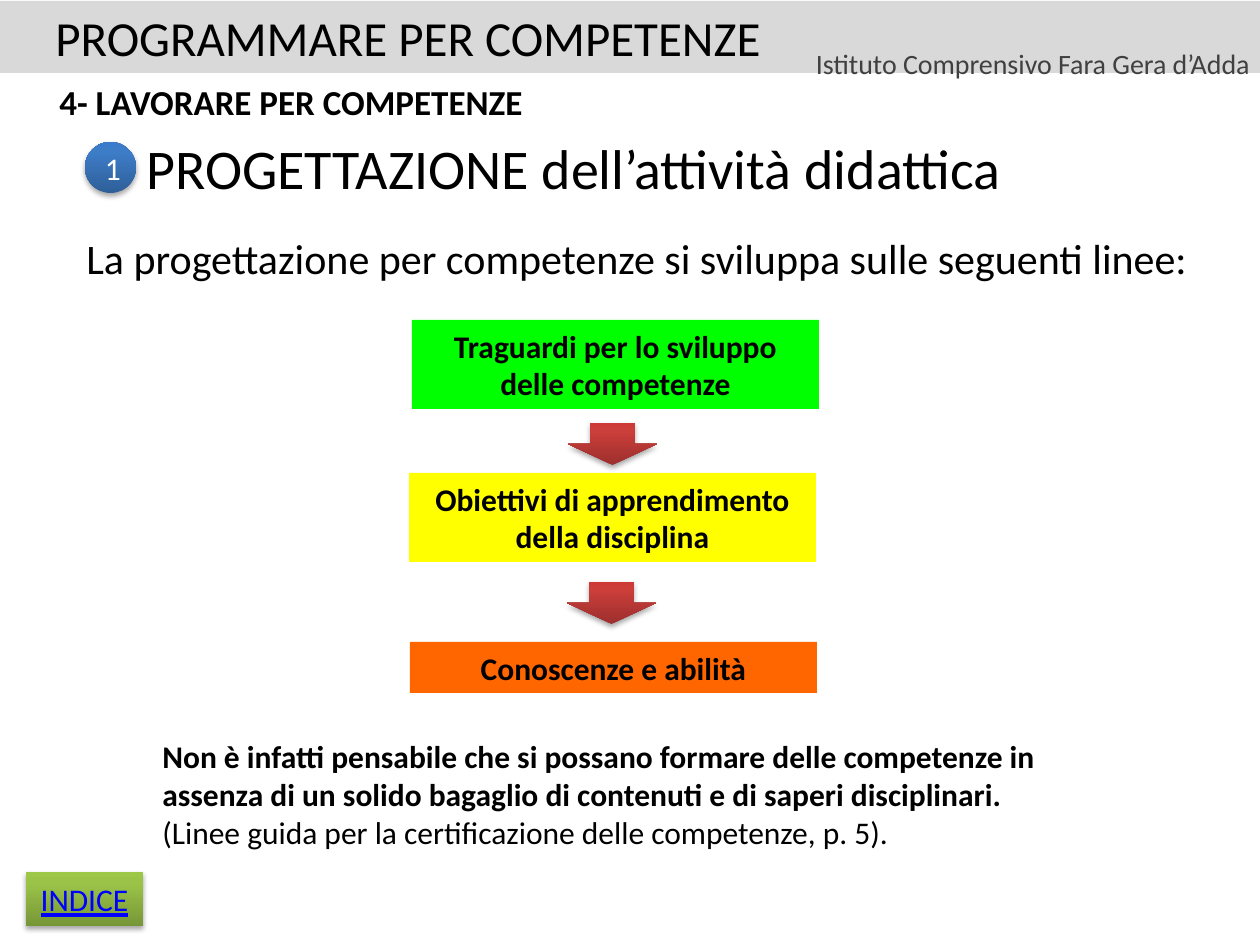
from copy import deepcopy

from lxml import etree
from pptx import Presentation
from pptx.dml.color import RGBColor
from pptx.enum.shapes import MSO_SHAPE
from pptx.enum.text import MSO_ANCHOR, PP_ALIGN
from pptx.oxml.ns import qn
from pptx.util import Pt

EMU_PER_PX = 914400 / 126
FONT = "Calibri"
RECTANGLE = MSO_SHAPE.RECTANGLE
ELLIPSE = MSO_SHAPE.OVAL
DOWN_ARROW = MSO_SHAPE.DOWN_ARROW
LEFT, CENTER = PP_ALIGN.LEFT, PP_ALIGN.CENTER
TOP, MIDDLE = MSO_ANCHOR.TOP, MSO_ANCHOR.MIDDLE

BLACK, WHITE, LINK_BLUE = "000000", "FFFFFF", "0000FF"
BAND_GREY, TEXT_GREY = "D9D9D9", "404040"
RED_GRADIENT = ("9C2F2D", "CB3E3A", "CE3B37")
BLUE_GRADIENT = ("2F5F99", "3D7CC7", "3A7CCB")
GREEN_GRADIENT = ("779737", "9BC348", "9DC746")
GRADIENT_POSITIONS = (0, 0.8, 1)


def px(*lengths):
    return [round(length * EMU_PER_PX) for length in lengths]


def color(hex_string):
    return RGBColor.from_string(hex_string)


def write_text(shape, *parts, size=18, fill=BLACK, bold=False, underline=None,
               align=LEFT, anchor=TOP, wrap=True):
    """Write one paragraph; a part is a string or a (string, bold) pair."""
    frame = shape.text_frame
    frame.word_wrap = wrap
    frame.vertical_anchor = anchor
    paragraph = frame.paragraphs[0]
    paragraph.alignment = align
    for part in parts:
        text, part_bold = (part, bold) if isinstance(part, str) else part
        run = paragraph.add_run()
        run.text = text
        font = run.font
        font.name, font.size = FONT, Pt(size)
        font.bold, font.underline = part_bold, underline
        font.color.rgb = color(fill)


class SlideBuilder:
    def __init__(self, slide):
        self.slide = slide

    def text(self, box, *parts, **text_format):
        shape = self.slide.shapes.add_textbox(*px(*box))
        write_text(shape, *parts, **text_format)

    def shape(self, kind, box, fill=None):
        shape = self.slide.shapes.add_shape(kind, *px(*box))
        shape.shadow.inherit = False
        shape.line.fill.background()
        if fill:
            shape.fill.solid()
            shape.fill.fore_color.rgb = color(fill)
        return shape

    def label(self, shape, text, **text_format):
        write_text(shape, text, align=CENTER, anchor=MIDDLE, **text_format)

    def raised_shape(self, kind, box, colors):
        """Add a shape with a vertical gradient, dark at the bottom, and a soft shadow."""
        shape = self.shape(kind, box)
        fill = shape.fill
        fill.gradient()
        fill.gradient_angle = 90
        stop_list = shape._element.spPr.find(qn("a:gradFill")).find(qn("a:gsLst"))
        stop_list.append(deepcopy(stop_list[-1]))
        for stop, position, hex_string in zip(fill.gradient_stops, GRADIENT_POSITIONS, colors):
            stop.position = position
            stop.color.rgb = color(hex_string)
        self.add_shadow(shape)
        return shape

    def add_shadow(self, shape):
        effects = shape._element.spPr.find(qn("a:effectLst"))
        shadow = etree.SubElement(
            effects, qn("a:outerShdw"), blurRad=str(Pt(3.1)), dist=str(Pt(1.8)),
            dir="5400000", rotWithShape="0")
        shade = etree.SubElement(shadow, qn("a:srgbClr"), val=BLACK)
        etree.SubElement(shade, qn("a:alpha"), val="35000")


def main():
    presentation = Presentation()
    presentation.slide_width, presentation.slide_height = px(1260, 945)
    builder = SlideBuilder(presentation.slides.add_slide(presentation.slide_layouts[6]))

    builder.shape(RECTANGLE, (0, 1, 1260, 72), BAND_GREY)
    builder.text((43, 1, 738, 72), "PROGRAMMARE PER COMPETENZE", size=28, wrap=False)
    builder.text((786, 40, 494, 40), "Istituto Comprensivo Fara Gera d’Adda",
                 size=16, fill=TEXT_GREY, align=CENTER)
    builder.text((47, 74, 1188, 55), "4- LAVORARE PER COMPETENZE", size=20, bold=True)

    number = builder.raised_shape(ELLIPSE, (85, 142, 51, 51), BLUE_GRADIENT)
    builder.label(number, "1", fill=WHITE)
    builder.text((134, 127, 1002, 81), "PROGETTAZIONE dell’attività didattica", size=32)
    builder.text((74, 226, 1171, 63),
                 "La progettazione per competenze si sviluppa sulle seguenti linee:", size=24)

    steps = (
        (412, 320, 89, "00FF00", "Traguardi per lo sviluppo delle competenze"),
        (409, 473, 89, "FFFF00", "Obiettivi di apprendimento della disciplina"),
        (410, 642, 51, "FF6600", "Conoscenze e abilità"),
    )
    for left, top, height, fill, text in steps:
        step = builder.shape(RECTANGLE, (left, top, 407, height), fill)
        builder.label(step, text, bold=True)
    for left, top in ((568, 423), (567, 582)):
        builder.raised_shape(DOWN_ARROW, (left, top, 89, 42), RED_GRADIENT)

    builder.text(
        (150, 731, 920, 127),
        ("Non è infatti pensabile che si possano formare delle competenze in assenza "
         "di un solido bagaglio di contenuti e di saperi disciplinari. ", True),
        "(Linee guida per la certificazione delle competenze, p. 5).")
    index = builder.raised_shape(RECTANGLE, (26, 872, 117, 54), GREEN_GRADIENT)
    builder.label(index, "INDICE", fill=LINK_BLUE, underline=True)

    presentation.save("out.pptx")


if __name__ == "__main__":
    main()
